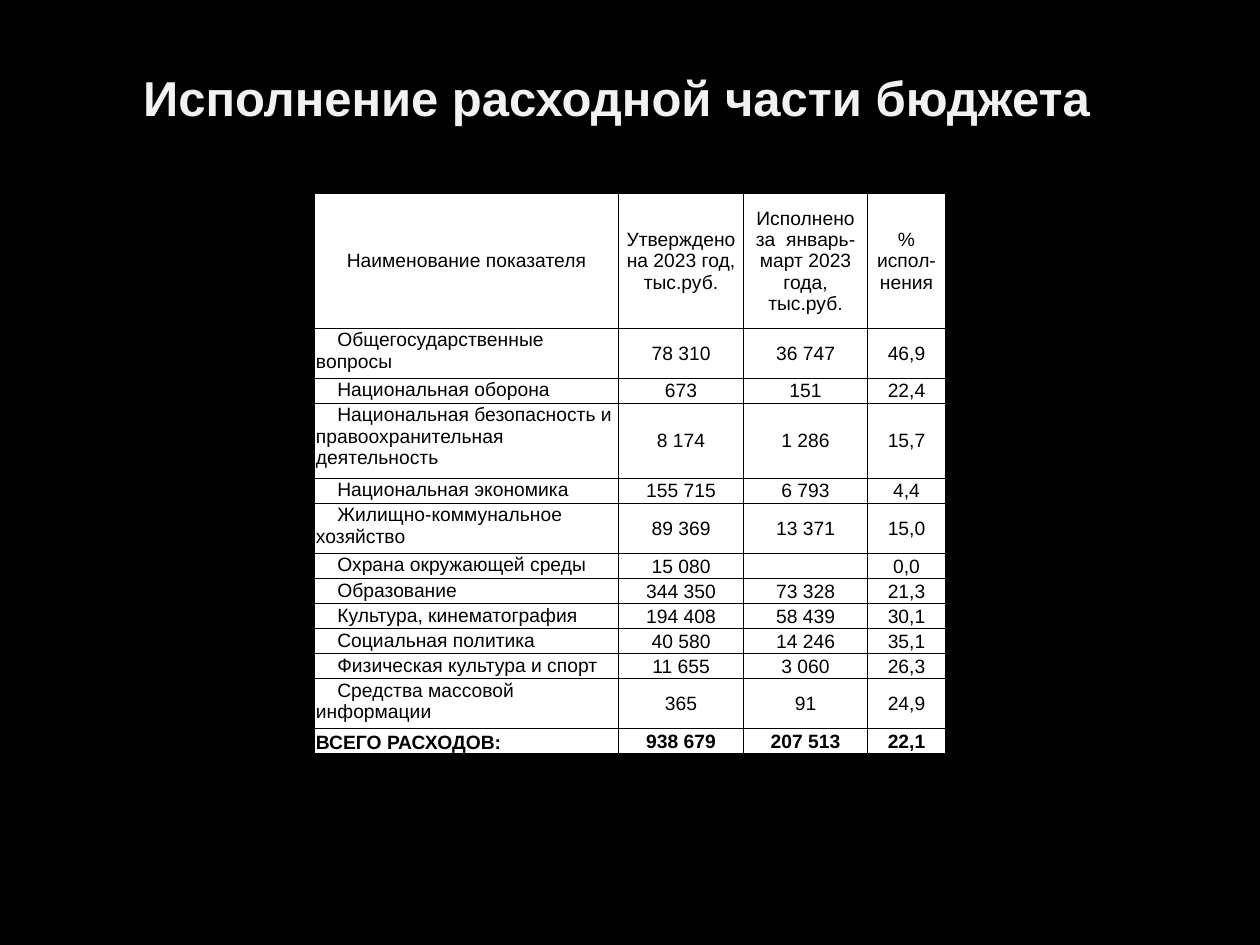
from dataclasses import dataclass

from lxml.etree import SubElement
from pptx import Presentation
from pptx.dml.color import RGBColor
from pptx.enum.text import MSO_ANCHOR, PP_ALIGN
from pptx.oxml.ns import qn
from pptx.util import Cm, Pt


@dataclass(frozen=True)
class Theme:
    font: str = "Arial"
    background: str = "000000"
    title_color: str = "F2F2F2"
    text_color: str = "000000"
    cell_fill: str = "FFFFFF"
    border_color: str = "000000"
    title_size: float = 28
    table_size: float = 11
    border_width: float = 0.5


THEME = Theme()

TITLE = "Исполнение расходной части бюджета"
HEADER = (
    "Наименование показателя",
    "Утверждено на 2023 год, тыс.руб.",
    "Исполнено за  январь-март 2023 года, тыс.руб.",
    "% испол-нения",
)
EXPENSES = [
    (2, "Общегосударственные вопросы", "78 310", "36 747", "46,9"),
    (1, "Национальная оборона", "673", "151", "22,4"),
    (3, "Национальная безопасность и правоохранительная деятельность",
     "8 174", "1 286", "15,7"),
    (1, "Национальная экономика", "155 715", "6 793", "4,4"),
    (2, "Жилищно-коммунальное хозяйство", "89 369", "13 371", "15,0"),
    (1, "Охрана окружающей среды", "15 080", "", "0,0"),
    (1, "Образование", "344 350", "73 328", "21,3"),
    (1, "Культура, кинематография", "194 408", "58 439", "30,1"),
    (1, "Социальная политика", "40 580", "14 246", "35,1"),
    (1, "Физическая культура и спорт", "11 655", "3 060", "26,3"),
    (2, "Средства массовой информации", "365", "91", "24,9"),
]
TOTAL = ("ВСЕГО РАСХОДОВ:", "938 679", "207 513", "22,1")

COLUMN_WIDTHS = (6.13, 2.52, 2.5, 1.57)
TABLE_LEFT, TABLE_TOP, TABLE_HEIGHT = 6.34, 3.89, 11.29
HEADER_HEIGHT = 2.72
CELL_MARGIN = 0.03
NAME_INDENT = 0.43


def add_text(paragraph, text, size, color, bold=False):
    run = paragraph.add_run()
    run.text = text
    run.font.name = THEME.font
    run.font.size = Pt(size)
    run.font.bold = bold
    run.font.color.rgb = RGBColor.from_string(color)


def add_borders(cell):
    properties = cell._tc.get_or_add_tcPr()
    for position, side in enumerate(("a:lnL", "a:lnR", "a:lnT", "a:lnB")):
        line = SubElement(properties, qn(side), w=str(Pt(THEME.border_width)))
        fill = SubElement(line, qn("a:solidFill"))
        SubElement(fill, qn("a:srgbClr"), val=THEME.border_color)
        properties.insert(position, line)


def fill_cell(cell, text, anchor, alignment, indent=0, bold=False):
    cell.margin_left = cell.margin_right = cell.margin_top = Cm(CELL_MARGIN)
    cell.margin_bottom = 0
    cell.vertical_anchor = anchor
    cell.fill.solid()
    cell.fill.fore_color.rgb = RGBColor.from_string(THEME.cell_fill)
    add_borders(cell)
    paragraph = cell.text_frame.paragraphs[0]
    paragraph.alignment = alignment
    if indent:
        properties = paragraph._p.get_or_add_pPr()
        properties.set("marL", "0")
        properties.set("indent", str(Cm(indent)))
    if text:
        add_text(paragraph, text, THEME.table_size, THEME.text_color, bold)
    else:
        SubElement(paragraph._p, qn("a:endParaRPr"), sz=str(int(THEME.table_size * 100)))


def add_title(slide):
    title = slide.shapes.title
    title.left, title.top, title.width, title.height = Cm(1.27), Cm(0.74), Cm(22.86), Cm(2.44)
    frame = title.text_frame
    frame.vertical_anchor = MSO_ANCHOR.MIDDLE
    frame.margin_right = Cm(0.8)
    paragraph = frame.paragraphs[0]
    paragraph.alignment = PP_ALIGN.CENTER
    add_text(paragraph, TITLE, THEME.title_size, THEME.title_color, bold=True)


def add_budget_table(slide):
    rows = [HEADER, *(values for _, *values in EXPENSES), TOTAL]
    line_counts = [lines for lines, *_ in EXPENSES] + [1]
    line_height = (TABLE_HEIGHT - HEADER_HEIGHT) / sum(line_counts)
    heights = [HEADER_HEIGHT] + [lines * line_height for lines in line_counts]

    table = slide.shapes.add_table(
        len(rows), len(HEADER), Cm(TABLE_LEFT), Cm(TABLE_TOP),
        Cm(sum(COLUMN_WIDTHS)), Cm(TABLE_HEIGHT),
    ).table
    table.first_row = table.horz_banding = False
    for column, width in zip(table.columns, COLUMN_WIDTHS):
        column.width = Cm(width)
    for row, height in zip(table.rows, heights):
        row.height = Cm(height)

    for row_index, values in enumerate(rows):
        is_total = values is TOTAL
        for column_index, text in enumerate(values):
            cell = table.cell(row_index, column_index)
            if column_index or values is HEADER:
                fill_cell(cell, text, MSO_ANCHOR.MIDDLE, PP_ALIGN.CENTER, bold=is_total)
            elif is_total:
                fill_cell(cell, text, MSO_ANCHOR.BOTTOM, PP_ALIGN.LEFT, bold=True)
            else:
                fill_cell(cell, text, MSO_ANCHOR.TOP, PP_ALIGN.LEFT, NAME_INDENT)


def main():
    presentation = Presentation()
    presentation.slide_width, presentation.slide_height = Cm(25.4), Cm(19.05)
    slide = presentation.slides.add_slide(presentation.slide_layouts[5])
    slide.background.fill.solid()
    slide.background.fill.fore_color.rgb = RGBColor.from_string(THEME.background)
    add_title(slide)
    add_budget_table(slide)
    presentation.save("out.pptx")


if __name__ == "__main__":
    main()
